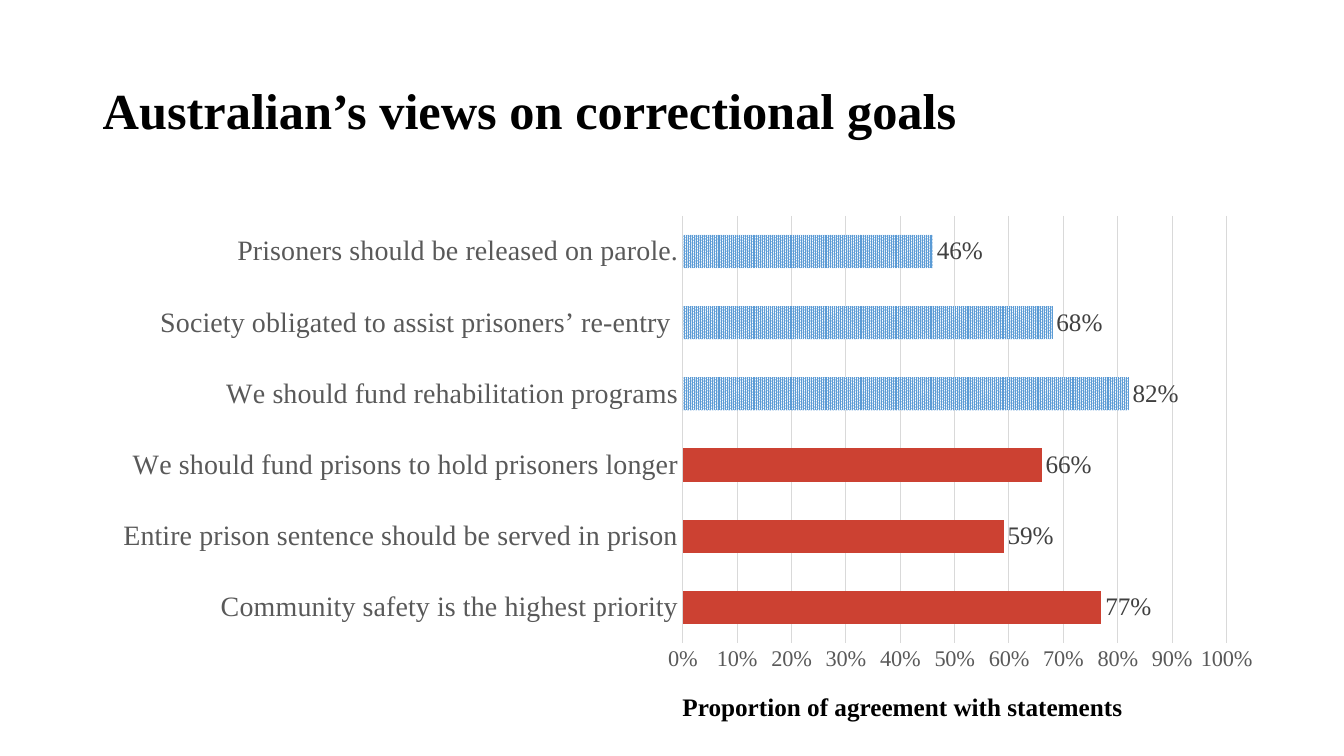
from dataclasses import dataclass

from lxml import etree
from pptx import Presentation
from pptx import util as u
from pptx.chart import data as chart_data
from pptx.dml import color
from pptx.enum import chart as chart_enum, dml, text
from pptx.oxml import ns


@dataclass(frozen=True)
class Theme:
    font: str = "Times New Roman"
    black: str = "000000"
    white: str = "FFFFFF"
    axis_text: str = "595959"
    label_text: str = "404040"
    grid: str = "D9D9D9"
    punitive: str = "CC4132"
    supportive: str = "5B9BD5"
    title_size: int = 36
    category_size: int = 20
    body_size: int = 18
    scale_size: int = 16
    chart_size: int = 10


THEME = Theme()
PUNITIVE_VIEWS = [
    ("Community safety is the highest priority", 0.77),
    ("Entire prison sentence should be served in prison", 0.59),
    ("We should fund prisons to hold prisoners longer", 0.66),
]
SUPPORTIVE_VIEWS = [
    ("We should fund rehabilitation programs", 0.82),
    ("Society obligated to assist prisoners’ re-entry ", 0.68),
    ("Prisoners should be released on parole.", 0.46),
]
PLOT_BOX = {"x": 0.51, "y": 0.03, "w": 0.47, "h": 0.89}


def rgb(value):
    return color.RGBColor.from_string(value)


def set_attributes(target, values):
    for name, value in values.items():
        setattr(target, name, value)


def style_font(font, size, hue, bold=False):
    set_attributes(font, {"name": THEME.font, "size": u.Pt(size), "bold": bold})
    font.color.rgb = rgb(hue)


def style_line(line, hue):
    line.width = u.Pt(0.75)
    line.color.rgb = rgb(hue)


def add_heading(slide, box, wording, size, frame_format, line_spacing=None):
    frame = slide.shapes.add_textbox(*map(u.Inches, box)).text_frame
    set_attributes(frame, frame_format)
    paragraph = frame.paragraphs[0]
    paragraph.line_spacing = line_spacing
    run = paragraph.add_run()
    run.text = wording
    style_font(run.font, size, THEME.black, bold=True)


def place_plot(chart, plot_box):
    """Fix the inner plot area to fractions of the chart's size."""
    plot_area = chart.element.find(".//" + ns.qn("c:plotArea"))
    for layout in plot_area.findall(ns.qn("c:layout")):
        plot_area.remove(layout)
    layout = etree.Element(ns.qn("c:layout"))
    manual = etree.SubElement(layout, ns.qn("c:manualLayout"))
    settings = {"layoutTarget": "inner", "xMode": "edge", "yMode": "edge", **plot_box}
    for name, value in settings.items():
        etree.SubElement(manual, ns.qn("c:" + name)).set("val", str(value))
    plot_area.insert(0, layout)


def style_axes(chart):
    tick_free = {
        "major_tick_mark": chart_enum.XL_TICK_MARK.NONE,
        "minor_tick_mark": chart_enum.XL_TICK_MARK.NONE,
    }
    categories, scale = chart.category_axis, chart.value_axis
    for axis, size in ((categories, THEME.category_size), (scale, THEME.scale_size)):
        set_attributes(axis, tick_free)
        style_font(axis.tick_labels.font, size, THEME.axis_text)
    style_line(categories.format.line, THEME.grid)
    set_attributes(scale, {"minimum_scale": 0, "maximum_scale": 1, "major_unit": 0.1})
    set_attributes(scale.tick_labels,
                   {"number_format": "0%", "number_format_is_linked": False})
    style_line(scale.major_gridlines.format.line, THEME.grid)
    scale.format.line.fill.background()


def style_bars(plot):
    set_attributes(plot, {"gap_width": 114, "overlap": -8,
                          "vary_by_categories": False})
    series = plot.series[0]
    series.format.fill.solid()
    series.format.fill.fore_color.rgb = rgb(THEME.supportive)
    series.invert_if_negative = False
    for index in range(len(PUNITIVE_VIEWS) + len(SUPPORTIVE_VIEWS)):
        fill = series.points[index].format.fill
        if index < len(PUNITIVE_VIEWS):
            fill.solid()
            fill.fore_color.rgb = rgb(THEME.punitive)
        else:
            fill.patterned()
            fill.pattern = dml.MSO_PATTERN.PERCENT_90
            fill.fore_color.rgb = rgb(THEME.supportive)
            fill.back_color.rgb = rgb(THEME.white)
    labels = series.data_labels
    set_attributes(labels, {
        "show_value": True,
        "number_format": "0%",
        "number_format_is_linked": False,
        "position": chart_enum.XL_LABEL_POSITION.OUTSIDE_END,
    })
    style_font(labels.font, THEME.body_size, THEME.label_text)


def add_views_chart(slide, box):
    views = chart_data.CategoryChartData(number_format="0%")
    names, shares = zip(*PUNITIVE_VIEWS, *SUPPORTIVE_VIEWS)
    views.categories = names
    views.add_series("Series 1", shares)
    chart = slide.shapes.add_chart(
        chart_enum.XL_CHART_TYPE.BAR_CLUSTERED, *map(u.Inches, box), views).chart
    set_attributes(chart, {"has_legend": False, "has_title": False})
    style_font(chart.font, THEME.chart_size, THEME.black)
    style_axes(chart)
    style_bars(chart.plots[0])
    place_plot(chart, PLOT_BOX)


def build_views_slide(presentation, box):
    slide = presentation.slides.add_slide(presentation.slide_layouts[6])
    left, top, width, height = box
    add_heading(slide, (left, top, width, 1.45),
                "Australian’s views on correctional goals", THEME.title_size,
                {"word_wrap": True, "vertical_anchor": text.MSO_ANCHOR.MIDDLE},
                line_spacing=0.9)
    add_views_chart(slide, (left, top + 1.6, width, 4.76))
    add_heading(slide, (left + width / 2, top + height - 0.4, 4.65, 0.4),
                "Proportion of agreement with statements", THEME.body_size,
                {"word_wrap": False,
                 "auto_size": text.MSO_AUTO_SIZE.SHAPE_TO_FIT_TEXT})


def main():
    presentation = Presentation()
    set_attributes(presentation, {"slide_width": u.Inches(13.33),
                                  "slide_height": u.Inches(7.5)})
    build_views_slide(presentation, (0.92, 0.4, 11.5, 6.81))
    presentation.save("out.pptx")


if __name__ == "__main__":
    main()
